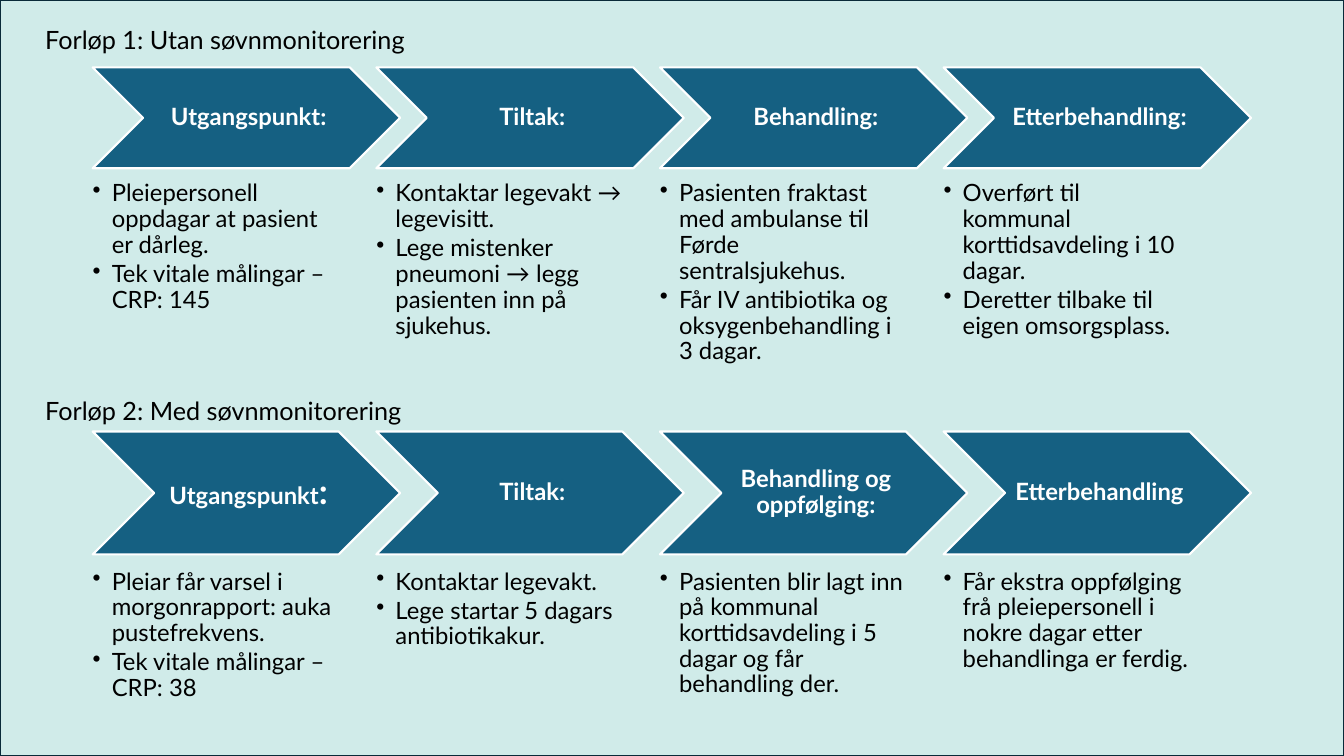
from lxml.etree import SubElement
from pptx import Presentation
from pptx.dml.color import RGBColor
from pptx.enum.shapes import MSO_SHAPE
from pptx.enum.text import MSO_ANCHOR, PP_ALIGN
from pptx.oxml.ns import qn
from pptx.util import Pt

# Content: headings are lists of (text, size) runs
COURSES = [
    {"title": "Forløp 1: Utan søvnmonitorering",
     "title_top": 13.7, "arrow_top": 48.2, "arrow_height": 72,
     "body_top": 129.6, "body_height": 136.8,
     "steps": [
         ([("Utgangspunkt:", 17)],
          ["Pleiepersonell oppdagar at pasient er dårleg.",
           "Tek vitale målingar – CRP: 145"]),
         ([("Tiltak:", 17)],
          ["Kontaktar legevakt → legevisitt.",
           "Lege mistenker pneumoni → legg pasienten inn på sjukehus."]),
         ([("Behandling:", 17)],
          ["Pasienten fraktast med ambulanse til Førde sentralsjukehus.",
           "Får IV antibiotika og oksygenbehandling i 3 dagar."]),
         ([("Etterbehandling:", 17)],
          ["Overført til kommunal korttidsavdeling i 10 dagar.",
           "Deretter tilbake til eigen omsorgsplass."]),
     ]},
    {"title": "Forløp 2: Med søvnmonitorering",
     "title_top": 278.6, "arrow_top": 308.2, "arrow_height": 87.8,
     "body_top": 406.8, "body_height": 97.9,
     "steps": [
         ([("Utgangspunkt", 17), (":", 25)],
          ["Pleiar får varsel i morgonrapport: auka pustefrekvens.",
           "Tek vitale målingar – CRP: 38"]),
         ([("Tiltak:", 17)],
          ["Kontaktar legevakt.",
           "Lege startar 5 dagars antibiotikakur."]),
         ([("Behandling og oppfølging:", 17)],
          ["Pasienten blir lagt inn på kommunal korttidsavdeling i 5 dagar "
           "og får behandling der."]),
         ([("Etterbehandling", 17)],
          ["Får ekstra oppfølging frå pleiepersonell i nokre dagar etter "
           "behandlinga er ferdig."]),
     ]},
]

# Format
SLIDE_WIDTH, SLIDE_HEIGHT = 960, 540
TITLE_LEFT, TITLE_WIDTH, TITLE_HEIGHT = 25.2, 273.6, 28.8
STEP_LEFT, STEP_PITCH = 66.2, 202.6
ARROW_WIDTH, BODY_WIDTH = 219.6, 175.7
BULLET_INDENT = 13.7
TITLE_FONT = {"name": "Lato", "size": Pt(18)}
BODY_FONT = {"name": "Lato", "size": Pt(17)}
HEADING_FONT = {"name": "Lato", "bold": True}
ARROW_FRAME = {"margin_left": Pt(5), "margin_right": Pt(1.7),
               "margin_top": Pt(1.7), "margin_bottom": Pt(1.7),
               "vertical_anchor": MSO_ANCHOR.MIDDLE, "word_wrap": True}
BODY_FRAME = {"margin_left": 0, "margin_right": 0, "margin_top": 0,
              "margin_bottom": 0, "word_wrap": True}
HEADING_PARAGRAPH = {"alignment": PP_ALIGN.CENTER, "line_spacing": 0.9}
BODY_PARAGRAPH = {"line_spacing": 0.9, "space_after": Pt(2.5)}


def set_values(target, values):
    for name, value in values.items():
        setattr(target, name, value)


def set_color(color_format, hex_color):
    color_format.rgb = RGBColor.from_string(hex_color)


def add_run(paragraph, text, font_values, hex_color):
    run = paragraph.add_run()
    run.text = text
    set_values(run.font, font_values)
    set_color(run.font.color, hex_color)


def add_filled_shape(slide, kind, box, fill, line):
    shape = slide.shapes.add_shape(kind, *map(Pt, box))
    shape.shadow.inherit = False
    shape.fill.solid()
    set_color(shape.fill.fore_color, fill)
    set_color(shape.line.color, line)
    shape.line.width = Pt(1.5)
    return shape


def add_text_frame(slide, box, frame_values):
    frame = slide.shapes.add_textbox(*map(Pt, box)).text_frame
    set_values(frame, frame_values)
    return frame


def add_bullet(paragraph):
    properties = paragraph._p.get_or_add_pPr()
    properties.set("marL", str(Pt(BULLET_INDENT)))
    properties.set("indent", str(-Pt(BULLET_INDENT)))
    SubElement(properties, qn("a:buChar")).set("char", "•")


def add_step(slide, course, left, heading, bullets):
    # Chevron with its heading
    box = left, course["arrow_top"], ARROW_WIDTH, course["arrow_height"]
    arrow = add_filled_shape(slide, MSO_SHAPE.CHEVRON, box, "156082", "FFFFFF")
    set_values(arrow.text_frame, ARROW_FRAME)
    paragraph = arrow.text_frame.paragraphs[0]
    set_values(paragraph, HEADING_PARAGRAPH)
    for text, size in heading:
        add_run(paragraph, text, {**HEADING_FONT, "size": Pt(size)}, "FFFFFF")

    # Bullets below
    box = left, course["body_top"], BODY_WIDTH, course["body_height"]
    frame = add_text_frame(slide, box, BODY_FRAME)
    for index, text in enumerate(bullets):
        paragraph = frame.add_paragraph() if index else frame.paragraphs[0]
        add_bullet(paragraph)
        set_values(paragraph, BODY_PARAGRAPH)
        add_run(paragraph, text, BODY_FONT, "000000")


def main():
    presentation = Presentation()
    presentation.slide_width = Pt(SLIDE_WIDTH)
    presentation.slide_height = Pt(SLIDE_HEIGHT)
    slide = presentation.slides.add_slide(presentation.slide_layouts[6])

    # Tinted background
    backdrop = add_filled_shape(slide, MSO_SHAPE.RECTANGLE,
                                (0, 0, SLIDE_WIDTH, SLIDE_HEIGHT),
                                "66C0B8", "092A39")
    fill_color = backdrop._element.spPr.find(qn("a:solidFill"))[0]
    SubElement(fill_color, qn("a:alpha")).set("val", "30000")

    # Both courses
    for course in COURSES:
        for column, (heading, bullets) in enumerate(course["steps"]):
            left = STEP_LEFT + column * STEP_PITCH
            add_step(slide, course, left, heading, bullets)
        box = TITLE_LEFT, course["title_top"], TITLE_WIDTH, TITLE_HEIGHT
        frame = add_text_frame(slide, box, {"word_wrap": False})
        add_run(frame.paragraphs[0], course["title"], TITLE_FONT, "000000")

    presentation.save("out.pptx")


if __name__ == "__main__":
    main()
